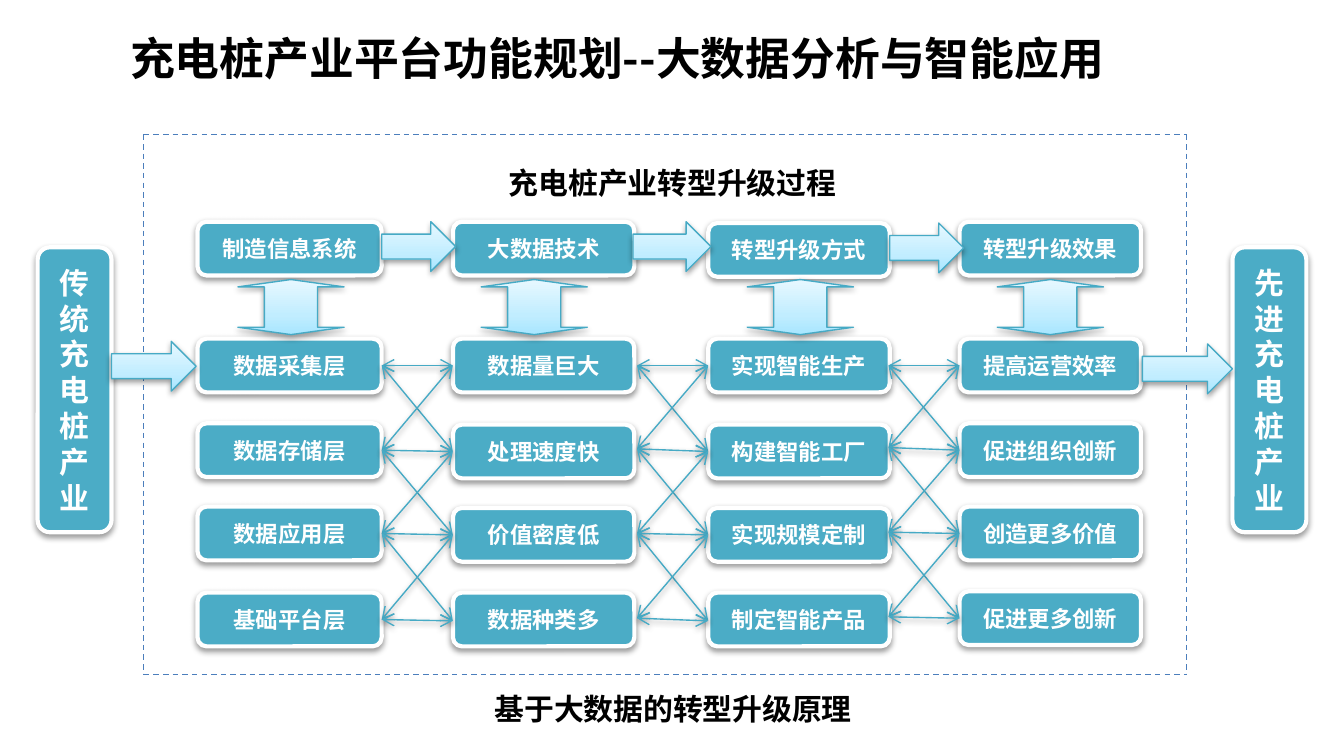
import pptx
import pptx.dml.color
import pptx.enum.dml
import pptx.enum.shapes
import pptx.enum.text
import pptx.oxml
import pptx.oxml.ns
import pptx.util
from lxml import etree

PX = 9144  # 100 px to the inch
RGB = pptx.dml.color.RGBColor
TEAL = RGB(0x4B, 0xAC, 0xC6)
TEAL_LINE = RGB(0x46, 0xAA, 0xC5)
FRAME_BLUE = RGB(0x4B, 0x7E, 0xBC)
WHITE = RGB(0xFF, 0xFF, 0xFF)
BLACK = RGB(0x00, 0x00, 0x00)
ARROW_STOPS = {0: RGB(0xA7, 0xE6, 0xFF), 35: RGB(0xC1, 0xED, 0xFF),
               100: RGB(0xE7, 0xF8, 0xFF)}

FONT = "Noto Sans CJK SC"
SHAPE = pptx.enum.shapes.MSO_SHAPE
ALIGN = pptx.enum.text.PP_ALIGN
qn = pptx.oxml.ns.qn

# left, width, tops and names of the nodes in each column
COLUMNS = [
    (147, 137, (165, 252, 315, 377, 441),
     ("制造信息系统", "数据采集层", "数据存储层", "数据应用层", "基础平台层")),
    (337, 135, (165, 252, 316, 378, 441),
     ("大数据技术", "数据量巨大", "处理速度快", "价值密度低", "数据种类多")),
    (527, 135, (166, 252, 316, 378, 441),
     ("转型升级方式", "实现智能生产", "构建智能工厂", "实现规模定制", "制定智能产品")),
    (714, 135, (165, 252, 315, 377, 440),
     ("转型升级效果", "提高运营效率", "促进组织创新", "创造更多价值", "促进更多创新")),
]
NODE_H = 40
# left of each link mesh, then the heights of its left and right ends
MESHES = [
    (284, (272, 335, 397, 461), (272, 336, 398, 462)),
    (474, (272, 334, 397, 460), (272, 336, 398, 462)),
    (661, (272, 333, 396, 459), (272, 335, 397, 460)),
]
LINK_W = 53


def px(*lengths):
    return [pptx.util.Emu(length * PX) for length in lengths]


def apply(target, values):
    for name, value in values.items():
        setattr(target, name, value)


def set_line(line, color, width):
    line.color.rgb = color
    line.width = pptx.util.Pt(width)


def add_effects(shape, shadow=True):
    """End the shape properties with a soft shadow below, or with no effect."""
    effects = etree.SubElement(shape._element.spPr, qn("a:effectLst"))
    if shadow:
        outer = etree.SubElement(effects, qn("a:outerShdw"), blurRad="40000",
                                 dist="20000", dir="5400000", rotWithShape="0")
        black = etree.SubElement(outer, qn("a:srgbClr"), val="000000")
        etree.SubElement(black, qn("a:alpha"), val="38000")


def write(shape, text, size, color, align=ALIGN.CENTER, spacing=None):
    frame = shape.text_frame
    apply(frame, {"word_wrap": True,
                  "vertical_anchor": pptx.enum.text.MSO_ANCHOR.MIDDLE})
    paragraph = frame.paragraphs[0]
    apply(paragraph, {"alignment": align, "line_spacing": spacing})
    run = paragraph.add_run()
    run.text = text
    apply(run.font, {"name": FONT, "size": pptx.util.Pt(size), "bold": True})
    run.font.color.rgb = color
    etree.SubElement(run.font._element, qn("a:ea"), typeface=FONT)


def add_label(slide, box, text, size, align=ALIGN.CENTER):
    write(slide.shapes.add_textbox(*px(*box)), text, size, BLACK, align)


def add_node(slide, box, text, size=12, spacing=None):
    node = slide.shapes.add_shape(SHAPE.ROUNDED_RECTANGLE, *px(*box))
    node.fill.solid()
    node.fill.fore_color.rgb = TEAL
    set_line(node.line, WHITE, 2.25)
    add_effects(node)
    write(node, text, size, WHITE, spacing=spacing)


def add_block_arrow(slide, kind, box, guides=None):
    """Pale block arrow; guides maps adjustment names to thousandths of a %."""
    arrow = slide.shapes.add_shape(kind, *px(*box))
    if guides:
        adjustments = arrow._element.spPr.find(".//" + qn("a:avLst"))
        for guide in list(adjustments):
            adjustments.remove(guide)
        for name, value in guides.items():
            etree.SubElement(adjustments, qn("a:gd"), name=name,
                             fmla=f"val {value}")
    arrow.fill.gradient()
    arrow.fill.gradient_angle = 90
    stops = arrow._element.spPr.find(".//" + qn("a:gsLst"))
    for stop in list(stops):
        stops.remove(stop)
    for position, color in ARROW_STOPS.items():
        stop = etree.SubElement(stops, qn("a:gs"), pos=str(position * 1000))
        etree.SubElement(stop, qn("a:srgbClr"), val=str(color))
    set_line(arrow.line, TEAL_LINE, 0.75)
    add_effects(arrow)


def add_straight(slide, ends, color):
    straight = slide.shapes.add_connector(
        pptx.enum.shapes.MSO_CONNECTOR.STRAIGHT, *px(*ends))
    set_line(straight.line, color, 0.75)
    return straight


def add_link(slide, ends):
    """Thin line with an open arrowhead at both ends."""
    link = add_straight(slide, ends, TEAL_LINE)
    line = link.line._get_or_add_ln()
    for end in ("a:headEnd", "a:tailEnd"):
        etree.SubElement(line, qn(end), type="arrow")
    add_effects(link)


def add_frame(slide, left, top, right, bottom):
    for ends in ((left, top, right, top), (left, bottom, right, bottom),
                 (left, top, left, bottom), (right, top, right, bottom)):
        side = add_straight(slide, ends, FRAME_BLUE)
        side.line.dash_style = pptx.enum.dml.MSO_LINE.DASH
        add_effects(side, shadow=False)


def add_link_mesh(slide, left, starts, stops):
    """Join each row to its neighbour and to the rows next to it."""
    right = left + LINK_W
    for row, start in enumerate(starts):
        for stop in stops[max(row - 1, 0):row + 2]:
            add_link(slide, (left, start, right, stop))


def main():
    deck = pptx.Presentation()
    deck.slide_width = px(1000)[0]
    deck.slide_height = deck.slide_width * 9 // 16
    slide = deck.slides.add_slide(deck.slide_layouts[6])

    add_label(slide, (87, 17, 831, 52),
              "充电桩产业平台功能规划--大数据分析与智能应用", 24, ALIGN.LEFT)
    for left, width, tops, names in COLUMNS:
        for top, name in zip(tops, names):
            add_node(slide, (left, top, width, NODE_H), name)
    for mesh in MESHES:
        add_link_mesh(slide, *mesh)
    for left in (177, 358, 556, 742):
        add_block_arrow(slide, SHAPE.UP_DOWN_ARROW, (left, 208, 79, 41),
                        {"adj1": 50000, "adj2": 13400})
    add_frame(slide, 107, 100, 883, 502)

    for left, name in ((28, "传统充电桩产业"), (917, "先进充电桩产业")):
        add_node(slide, (left, 184, 55, 212), name, 16, pptx.util.Pt(19.2))
    for left, top, width in ((284, 165, 55), (471, 165, 58), (662, 166, 55),
                             (83, 254, 63), (850, 256, 67)):
        add_block_arrow(slide, SHAPE.RIGHT_ARROW, (left, top, width, 37))

    add_label(slide, (351, 117, 299, 37), "充电桩产业转型升级过程", 16)
    add_label(slide, (290, 509, 422, 37), "基于大数据的转型升级原理", 16)
    deck.save("out.pptx")


if __name__ == "__main__":
    main()
